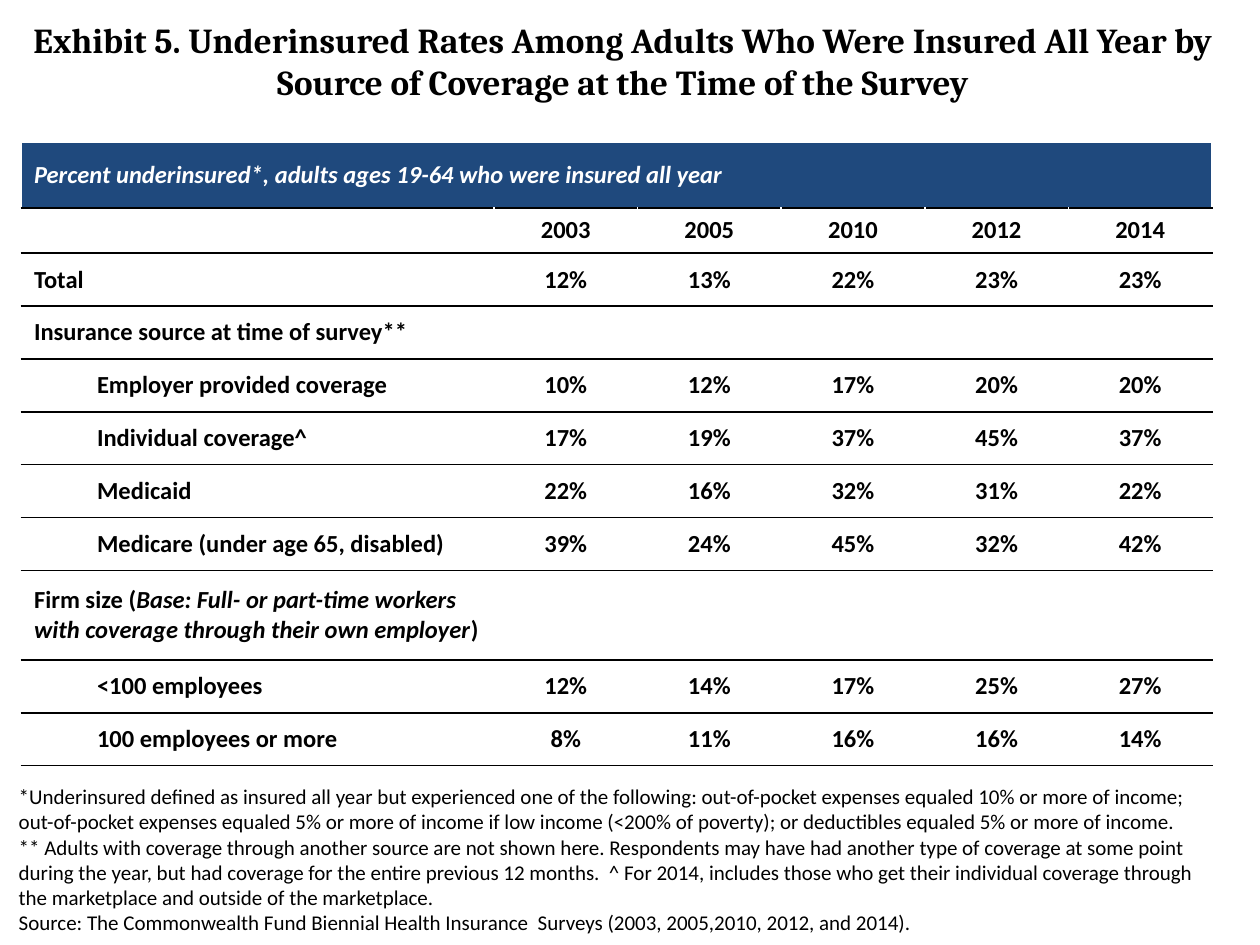
import lxml.etree
import pptx
import pptx.dml.color
import pptx.enum.text
import pptx.oxml.ns
import pptx.util
from pptx.util import Inches

ALIGN = pptx.enum.text.PP_ALIGN
BLACK, WHITE, NAVY = "000000", "FFFFFF", "1F497D"
COLUMN_WIDTHS = [3.75] + [1.14] * 5
HEADER_HEIGHT, YEAR_HEIGHT, ROW_HEIGHT, FIRM_HEIGHT = 0.52, 0.36, 0.42, 0.71
FIRM_ROW = 8

TITLE = ("Exhibit 5. Underinsured Rates Among Adults Who Were Insured All Year by "
         "Source of Coverage at the Time of the Survey")
TABLE_HEADING = "Percent underinsured*, adults ages 19-64 who were insured all year"
FIRM_SPANS = [
    ("Firm size (", False),
    ("Base: Full- or part-time workers with coverage through their own employer", True),
    (")", False),
]
# Label, whether it is indented, and the values for each year
ROWS = [
    ("", False, ["2003", "2005", "2010", "2012", "2014"]),
    ("Total", False, ["12%", "13%", "22%", "23%", "23%"]),
    ("Insurance source at time of survey**", False, []),
    ("Employer provided coverage", True, ["10%", "12%", "17%", "20%", "20%"]),
    ("Individual coverage^", True, ["17%", "19%", "37%", "45%", "37%"]),
    ("Medicaid", True, ["22%", "16%", "32%", "31%", "22%"]),
    ("Medicare (under age 65, disabled)", True, ["39%", "24%", "45%", "32%", "42%"]),
    (FIRM_SPANS, False, []),
    ("<100 employees", True, ["12%", "14%", "17%", "25%", "27%"]),
    ("100 employees or more", True, ["8%", "11%", "16%", "16%", "14%"]),
]
NOTES = [
    "*Underinsured defined as insured all year but experienced one of the following: "
    "out-of-pocket expenses equaled 10% or more of income; out-of-pocket expenses equaled "
    "5% or more of income if low income (<200% of poverty); or deductibles equaled 5% or "
    "more of income. ** Adults with coverage through another source are not shown here. "
    "Respondents may have had another type of coverage at some point during the year, but "
    "had coverage for the entire previous 12 months.  ^ For 2014, includes those who get "
    "their individual coverage through the marketplace and outside of the marketplace.",
    "Source: The Commonwealth Fund Biennial Health Insurance  Surveys "
    "(2003, 2005,2010, 2012, and 2014).",
]


def color(hex_value):
    return pptx.dml.color.RGBColor.from_string(hex_value)


def format_span(span, size, font="Calibri", hex_value=BLACK, bold=False, italic=False):
    span.font.name = font
    span.font.size = pptx.util.Pt(size)
    span.font.color.rgb = color(hex_value)
    span.font.bold = bold
    span.font.italic = italic


def add_text(page, left, top, width, height, lines, align=ALIGN.LEFT, **style):
    box = page.shapes.add_textbox(Inches(left), Inches(top), Inches(width), Inches(height))
    frame = box.text_frame
    frame.word_wrap = True
    frame.text = "\n".join(lines)
    for para in frame.paragraphs:
        para.alignment = align
        for span in para.runs:
            format_span(span, **style)


def add_border(cell, edge):
    """Draw a thin black rule on one edge (lnT or lnB) ahead of the cell fill."""
    properties = cell._tc.get_or_add_tcPr()
    line = lxml.etree.Element(pptx.oxml.ns.qn("a:" + edge), w=str(pptx.util.Pt(1)))
    fill = lxml.etree.SubElement(line, pptx.oxml.ns.qn("a:solidFill"))
    lxml.etree.SubElement(fill, pptx.oxml.ns.qn("a:srgbClr"), val=BLACK)
    lines = [child for child in properties if child.tag.endswith(("lnT", "lnB"))]
    properties.insert(len(lines), line)


def style_cell(cell, edges, fill=None):
    cell.vertical_anchor = pptx.enum.text.MSO_ANCHOR.MIDDLE
    cell.margin_top = cell.margin_bottom = 0
    if fill:
        cell.fill.solid()
        cell.fill.fore_color.rgb = color(fill)
    else:
        cell.fill.background()
    for edge in edges:
        add_border(cell, edge)


def write_cell(cell, spans, align=ALIGN.LEFT, indented=False, hex_value=BLACK):
    para = cell.text_frame.paragraphs[0]
    para.alignment = align
    if indented:
        para.level = 1
        properties = para._p.get_or_add_pPr()
        properties.set("marL", str(Inches(0.5)))
        properties.set("indent", "0")
    for text, italic in spans:
        span = para.add_run()
        span.text = text
        format_span(span, 14, hex_value=hex_value, bold=True, italic=italic)


def add_rates_table(page):
    heights = [HEADER_HEIGHT, YEAR_HEIGHT] + [ROW_HEIGHT] * (len(ROWS) - 1)
    heights[FIRM_ROW] = FIRM_HEIGHT
    table = page.shapes.add_table(
        len(heights), len(COLUMN_WIDTHS), Inches(0.17), Inches(1.13),
        Inches(sum(COLUMN_WIDTHS)), Inches(sum(heights))).table
    table.first_row = table.horz_banding = False
    for column, width in zip(table.columns, COLUMN_WIDTHS):
        column.width = Inches(width)
    for row, height in zip(table.rows, heights):
        row.height = Inches(height)

    # Heading band across all columns
    for cell in table.rows[0].cells:
        style_cell(cell, ["lnB"], NAVY)
    table.cell(0, 0).merge(table.cell(0, len(COLUMN_WIDTHS) - 1))
    write_cell(table.cell(0, 0), [(TABLE_HEADING, True)], hex_value=WHITE)

    # Years, groups and rates
    for number, (label, indented, values) in enumerate(ROWS, start=1):
        for cell in table.rows[number].cells:
            style_cell(cell, ["lnT", "lnB"])
        if label:
            spans = [(label, False)] if isinstance(label, str) else label
            write_cell(table.cell(number, 0), spans, indented=indented)
        for column, value in enumerate(values, start=1):
            write_cell(table.cell(number, column), [(value, False)], ALIGN.CENTER)


def main():
    deck = pptx.Presentation()
    deck.slide_width, deck.slide_height = Inches(10), Inches(7.5)
    page = deck.slides.add_slide(deck.slide_layouts[6])
    add_text(page, 0.05, 0.1, 9.79, 0.77, [TITLE], ALIGN.CENTER,
             size=20, font="Cambria", bold=True)
    add_rates_table(page)
    add_text(page, 0.05, 6.17, 9.58, 1.31, NOTES, size=12)
    deck.save("out.pptx")


if __name__ == "__main__":
    main()
